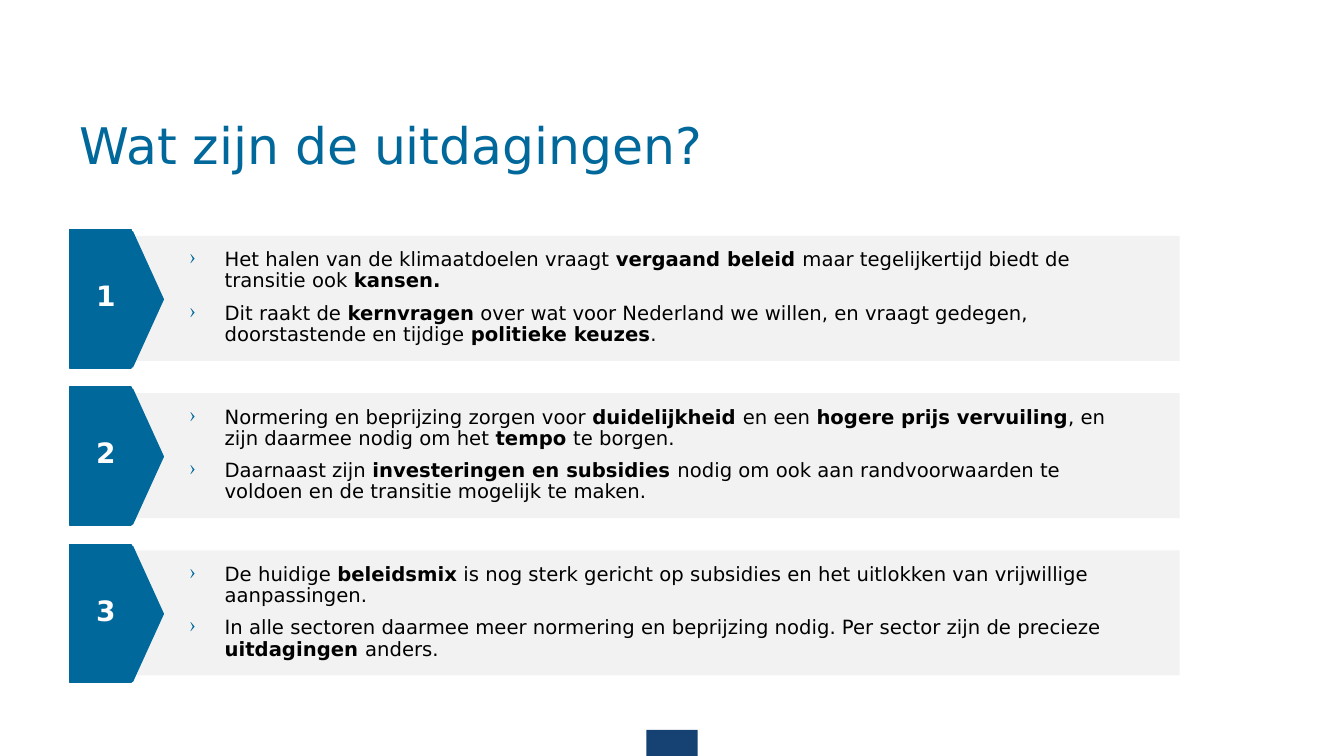
from lxml import etree
from pptx import Presentation
from pptx.dml.color import RGBColor
from pptx.enum import shapes, text
from pptx.oxml.ns import qn
from pptx.util import Inches, Pt

HUES = {"blue": "00689A", "navy": "154273", "grey": "F2F2F2",
        "white": "FFFFFF", "black": "000000"}
KIND = shapes.MSO_SHAPE
PITCH = 1.56
ROWS = [
    ["Het halen van de klimaatdoelen vraagt **vergaand beleid **maar tegelijkertijd "
     "biedt de transitie ook **kansen.**",
     "Dit raakt de **kernvragen** over wat voor Nederland we willen, en vraagt gedegen, "
     "doorstastende en tijdige **politieke keuzes**."],
    ["Normering en beprijzing zorgen voor **duidelijkheid **en een **hogere prijs "
     "vervuiling**, en zijn daarmee nodig om het **tempo **te borgen.",
     "Daarnaast zijn **investeringen en subsidies **nodig om ook aan randvoorwaarden "
     "te voldoen en de transitie mogelijk te maken."],
    ["De huidige **beleidsmix** is nog sterk gericht op subsidies en het uitlokken van "
     "vrijwillige aanpassingen.",
     "In alle sectoren daarmee meer normering en beprijzing nodig. Per sector zijn de "
     "precieze **uitdagingen **anders."],
]


def tint(name):
    return RGBColor.from_string(HUES[name])


def apply(item, values):
    for name, value in values.items():
        setattr(item, name, value)


class Deck:
    def __init__(self, face):
        self.face = face
        self.file = Presentation()
        apply(self.file, {"slide_width": Inches(13.33), "slide_height": Inches(7.5)})
        self.slide = self.file.slides.add_slide(self.file.slide_layouts[5])

    def style(self, font, size, hue, bold=False):
        apply(font, {"name": self.face, "size": Pt(size), "bold": bold})
        font.color.rgb = tint(hue)

    def title(self, words, *box):
        head = self.slide.shapes.title
        apply(head, dict(zip(("left", "top", "width", "height"), map(Inches, box))))
        frame = head.text_frame
        apply(frame, {"word_wrap": True, "vertical_anchor": text.MSO_ANCHOR.TOP,
                      "auto_size": text.MSO_AUTO_SIZE.NONE})
        para = frame.paragraphs[0]
        para.text = words
        apply(para, {"alignment": text.PP_ALIGN.LEFT, "line_spacing": 0.9})
        self.style(para.runs[0].font, 36, "blue")

    def shape(self, kind, hue, *box, home=None, edge=False):
        item = (home or self.slide).shapes.add_shape(kind, *map(Inches, box))
        item.shadow.inherit = False
        item.fill.solid()
        item.fill.fore_color.rgb = tint(hue)
        if edge:
            item.line.color.rgb = tint(hue)
            item.line.width = Pt(1)
        else:
            item.line.fill.background()

    def frame(self, *box, home=None, anchor=text.MSO_ANCHOR.TOP):
        frame = (home or self.slide).shapes.add_textbox(*map(Inches, box)).text_frame
        apply(frame, {"word_wrap": True, "vertical_anchor": anchor})
        return frame

    def marker(self, label, top):
        """Group a block, a diamond and a number into one arrow."""
        group = self.slide.shapes.add_group_shape()
        self.shape(KIND.FLOWCHART_PROCESS, "blue", 0.69, top, 0.61, 1.37,
                   home=group, edge=True)
        self.shape(KIND.FLOWCHART_DECISION, "blue", 1.01, top + 0.02, 0.61, 1.34,
                   home=group, edge=True)
        frame = self.frame(0.79, top + 0.43, 0.52, 0.44, home=group,
                           anchor=text.MSO_ANCHOR.MIDDLE)
        para = frame.paragraphs[0]
        para.text = label
        para.alignment = text.PP_ALIGN.CENTER
        self.style(para.runs[0].font, 20, "white", True)

    def bullets(self, points, *box):
        """Write a bulleted list; words between double asterisks are bold."""
        frame = self.frame(*box)
        for rank, point in enumerate(points):
            para = frame.add_paragraph() if rank else frame.paragraphs[0]
            props = para._p.get_or_add_pPr()
            props.set("marL", str(Inches(0.35)))
            props.set("indent", str(-Inches(0.35)))
            paint = etree.SubElement(props, qn("a:buClr"))
            etree.SubElement(paint, qn("a:srgbClr"), val=HUES["blue"])
            etree.SubElement(props, qn("a:buChar"), char="›")
            apply(para, {"line_spacing": 0.9, "space_before": Pt(8 if rank else 0)})
            for turn, words in enumerate(point.split("**")):
                if words:
                    run = para.add_run()
                    run.text = words
                    self.style(run.font, 14, "black", turn % 2 == 1)


def main():
    deck = Deck("DejaVu Sans")
    deck.shape(KIND.RECTANGLE, "navy", 6.41, 7.24, 0.51, 0.26)
    deck.title("Wat zijn de uitdagingen?", 0.69, 1.15, 11.95, 1.04)
    for rank, points in enumerate(ROWS):
        top = 2.28 + rank * PITCH
        deck.shape(KIND.RECTANGLE, "grey", 1.3, top + 0.06, 10.4, 1.24)
        deck.marker(str(rank + 1), top)
        deck.bullets(points, 1.78, top + 0.15, 9.67, 1.06)
    deck.file.save("out.pptx")


if __name__ == "__main__":
    main()
